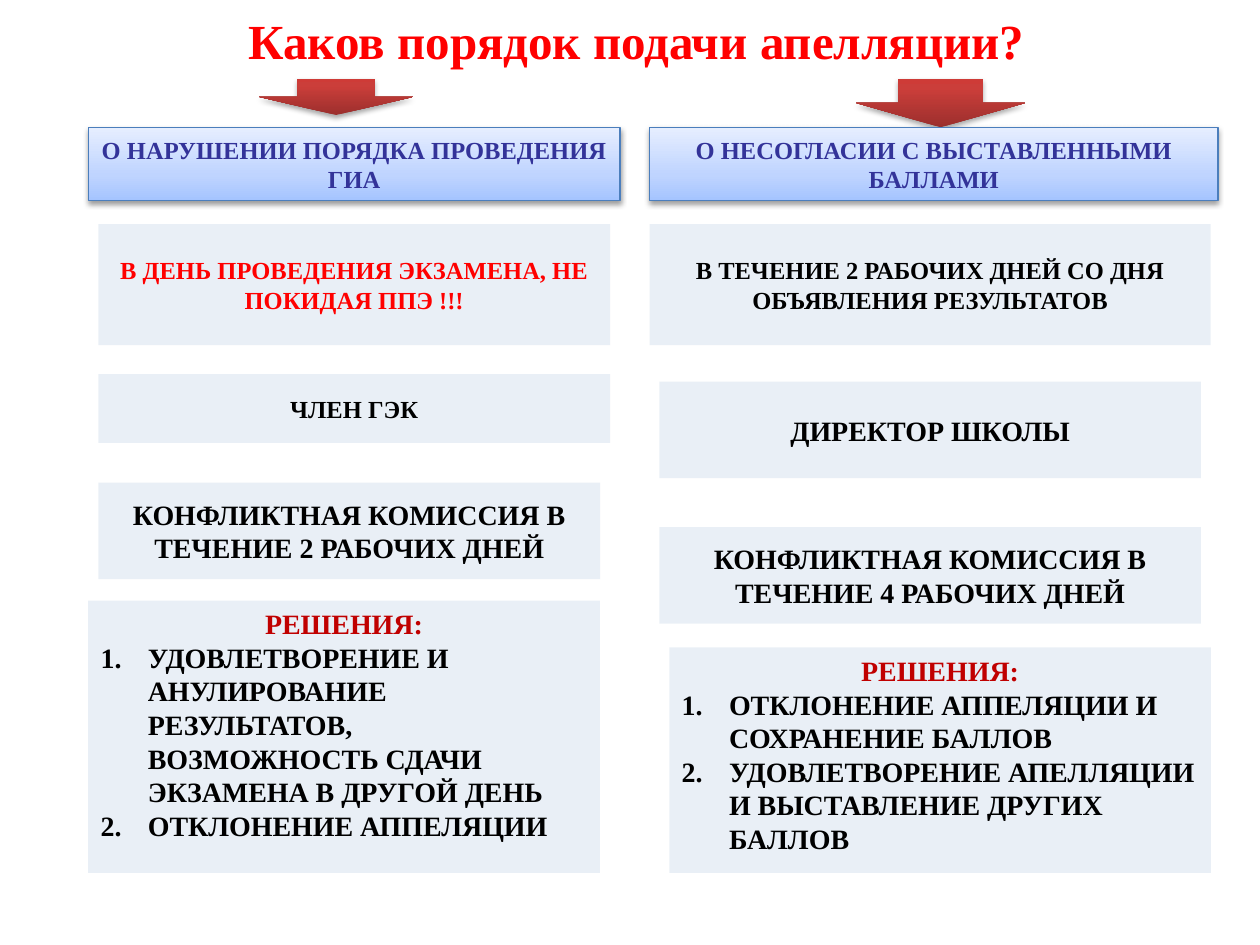
from lxml.etree import SubElement as add_element
from pptx import Presentation
from pptx.dml.color import RGBColor
from pptx.enum.shapes import MSO_SHAPE as SHAPE
from pptx.enum.text import MSO_ANCHOR as ANCHOR, PP_ALIGN as ALIGN
from pptx.oxml.ns import qn
from pptx.util import Pt

RED = RGBColor(0xFF, 0x00, 0x00)
DARK_RED = RGBColor(0xC0, 0x00, 0x00)
BLACK = RGBColor(0x00, 0x00, 0x00)
INDIGO = RGBColor(0x33, 0x33, 0x99)
PALE_BLUE = RGBColor(0xB9, 0xCD, 0xE5)
BORDER_BLUE = RGBColor(0x4B, 0x7E, 0xBC)
RED_STOPS = [(0, RGBColor(0x9C, 0x2F, 0x2D)), (80, RGBColor(0xCB, 0x3E, 0x3A)),
             (100, RGBColor(0xCE, 0x3B, 0x37))]
BLUE_STOPS = [(0, RGBColor(0xA4, 0xC4, 0xFF)), (35, RGBColor(0xBF, 0xD4, 0xFF)),
              (100, RGBColor(0xE6, 0xEE, 0xFF))]


def write(para, text, size=14, color=BLACK, align=ALIGN.CENTER, numbered=False):
    para.alignment = align
    if numbered:
        props = para._p.get_or_add_pPr()
        props.set("marL", str(Pt(27)))
        props.set("indent", str(Pt(-27)))
        add_element(props, qn("a:buFont"), typeface="+mj-lt")
        add_element(props, qn("a:buAutoNum"), type="arabicPeriod")
    span = para.add_run()
    span.text = text
    span.font.name = "Times New Roman"
    span.font.size = Pt(size)
    span.font.bold = True
    span.font.color.rgb = color


def add_block(kind, place, stops=None, shadow_alpha=38):
    block = page.shapes.add_shape(kind, *[Pt(value) for value in place])
    block.shadow.inherit = False
    block.line.fill.background()
    block.text_frame.word_wrap = True
    block.text_frame.vertical_anchor = ANCHOR.MIDDLE
    if not stops:
        block.fill.solid()
        block.fill.fore_color.rgb = PALE_BLUE
        tint = next(block._element.spPr.iter(qn("a:srgbClr")))
        add_element(tint, qn("a:alpha"), val="31000")
        return block
    block.fill.gradient()
    block.fill.gradient_angle = 90
    stop_list = next(block._element.spPr.iter(qn("a:gsLst")))
    stop_list.clear()
    for position, color in stops:
        stop = add_element(stop_list, qn("a:gs"), pos=str(position * 1000))
        add_element(stop, qn("a:srgbClr"), val=str(color))
    effects = block._element.spPr.find(qn("a:effectLst"))
    shadow = add_element(effects, qn("a:outerShdw"), blurRad=str(Pt(3.1)), dist=str(Pt(1.7)),
                         dir="5400000", rotWithShape="0")
    shade = add_element(shadow, qn("a:srgbClr"), val="000000")
    add_element(shade, qn("a:alpha"), val=str(shadow_alpha * 1000))
    return block


deck = Presentation()
deck.slide_width, deck.slide_height = Pt(720), Pt(540)
page = deck.slides.add_slide(deck.slide_layouts[5])

title = page.shapes.title
title.left, title.top, title.width, title.height = Pt(39.6), Pt(0), Pt(648), Pt(46)
title.text_frame.vertical_anchor = ANCHOR.MIDDLE
write(title.text_frame.paragraphs[0], "Каков порядок подачи апелляции?", size=28, color=RED)

for place in [(147.9, 45, 88.3, 20.7), (489.3, 45, 96.5, 27.7)]:
    add_block(SHAPE.DOWN_ARROW, place, RED_STOPS, shadow_alpha=35)

headers = [
    ((50.4, 72.8, 304, 41.8), "О НАРУШЕНИИ ПОРЯДКА ПРОВЕДЕНИЯ ГИА"),
    ((371.2, 72.8, 324.8, 41.8), "О НЕСОГЛАСИИ С ВЫСТАВЛЕННЫМИ БАЛЛАМИ"),
]
for place, text in headers:
    header = add_block(SHAPE.RECTANGLE, place, BLUE_STOPS)
    header.line.color.rgb = BORDER_BLUE
    header.line.width = Pt(0.75)
    write(header.text_frame.paragraphs[0], text, color=INDIGO)

steps = [
    ((56.2, 128, 292.4, 69.2), "В ДЕНЬ ПРОВЕДЕНИЯ ЭКЗАМЕНА, НЕ ПОКИДАЯ ППЭ !!!", 14, RED),
    ((56.2, 213.8, 292.4, 39.3), "ЧЛЕН ГЭК", 14, BLACK),
    ((56.2, 275.8, 286.8, 55.2), "КОНФЛИКТНАЯ КОМИССИЯ В ТЕЧЕНИЕ 2 РАБОЧИХ ДНЕЙ", 16, BLACK),
    ((371.2, 128, 320.6, 69.2), "В ТЕЧЕНИЕ 2 РАБОЧИХ ДНЕЙ СО ДНЯ ОБЪЯВЛЕНИЯ РЕЗУЛЬТАТОВ", 14, BLACK),
    ((376.8, 218.1, 309.5, 55.2), "ДИРЕКТОР ШКОЛЫ", 16, BLACK),
    ((376.8, 301.2, 309.5, 55.2), "КОНФЛИКТНАЯ КОМИССИЯ В ТЕЧЕНИЕ 4 РАБОЧИХ ДНЕЙ", 16, BLACK),
]
for place, text, size, color in steps:
    step = add_block(SHAPE.RECTANGLE, place)
    write(step.text_frame.paragraphs[0], text, size=size, color=color)

decisions = [
    ((50.4, 343.2, 292.4, 155.6),
     ["УДОВЛЕТВОРЕНИЕ И АНУЛИРОВАНИЕ РЕЗУЛЬТАТОВ, ВОЗМОЖНОСТЬ СДАЧИ ЭКЗАМЕНА В ДРУГОЙ ДЕНЬ",
      "ОТКЛОНЕНИЕ АППЕЛЯЦИИ"]),
    ((382.5, 370, 309.5, 128.8),
     ["ОТКЛОНЕНИЕ АППЕЛЯЦИИ И СОХРАНЕНИЕ БАЛЛОВ",
      "УДОВЛЕТВОРЕНИЕ АПЕЛЛЯЦИИ И ВЫСТАВЛЕНИЕ ДРУГИХ БАЛЛОВ"]),
]
for place, outcomes in decisions:
    frame = add_block(SHAPE.RECTANGLE, place).text_frame
    frame.vertical_anchor = ANCHOR.TOP
    write(frame.paragraphs[0], "РЕШЕНИЯ:", size=16, color=DARK_RED)
    for outcome in outcomes:
        write(frame.add_paragraph(), outcome, size=16, align=ALIGN.LEFT, numbered=True)

deck.save("out.pptx")
